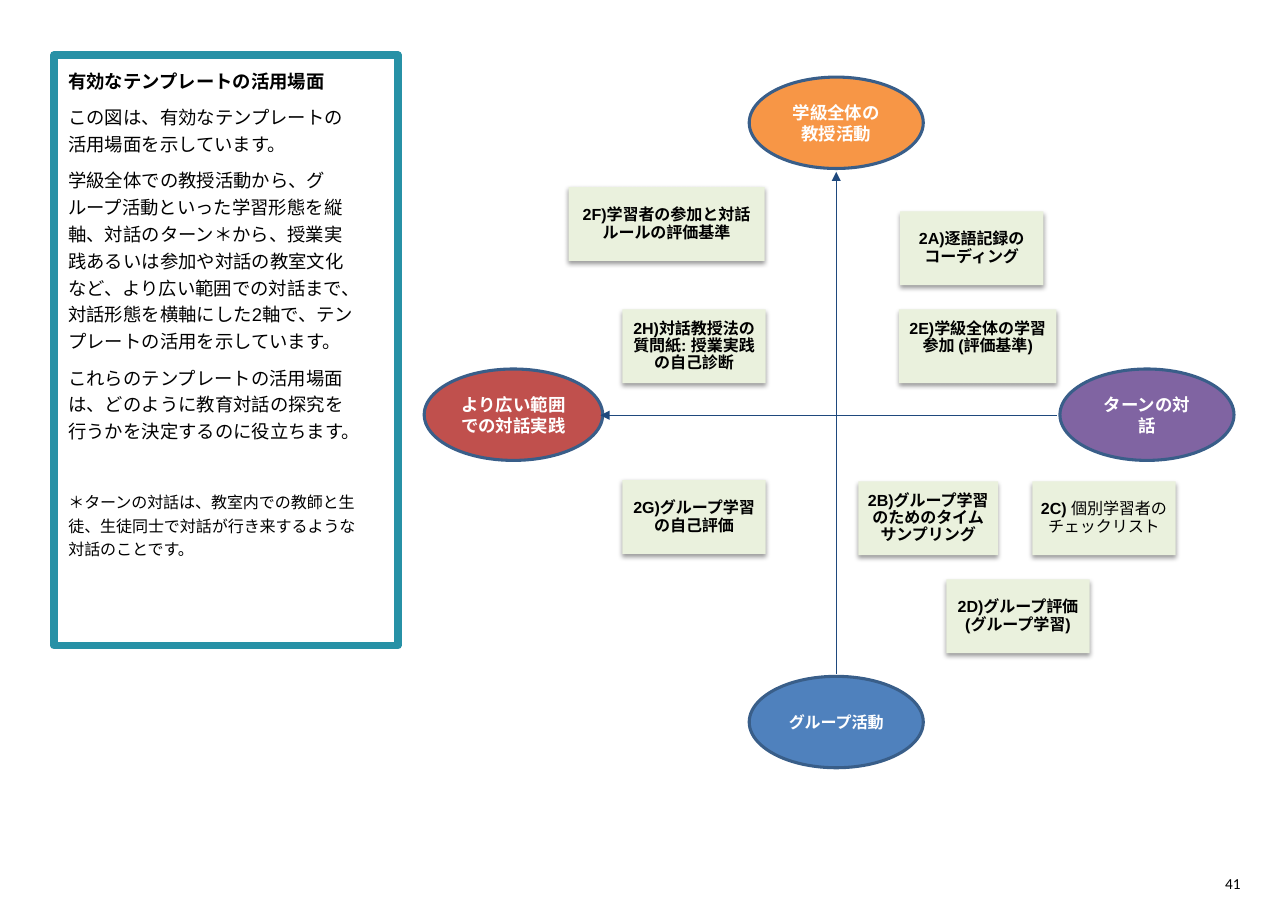
from lxml.etree import SubElement
from pptx import Presentation
from pptx.dml.color import RGBColor
from pptx.enum.shapes import MSO_CONNECTOR, MSO_SHAPE
from pptx.enum.text import MSO_ANCHOR, PP_ALIGN
from pptx.oxml.ns import qn
from pptx.util import Inches, Pt

BLACK = RGBColor(0x00, 0x00, 0x00)
WHITE = RGBColor(0xFF, 0xFF, 0xFF)
TEAL = RGBColor(0x27, 0x91, 0xA6)
NAVY = RGBColor(0x1F, 0x49, 0x7D)
OUTLINE = RGBColor(0x39, 0x5E, 0x89)
PALE_GREEN = RGBColor(0xEA, 0xF1, 0xDD)
RED = RGBColor(0xC0, 0x50, 0x4D)
PURPLE = RGBColor(0x80, 0x64, 0xA2)
ORANGE = RGBColor(0xF7, 0x96, 0x46)
BLUE = RGBColor(0x4F, 0x81, 0xBD)

# text, size, bold, space before
PANEL_TEXT = [
    ("有効なテンプレートの活用場面", 12, True, 0),
    ("この図は、有効なテンプレートの活用場面を示しています。", 12, False, 6.2),
    ("学級全体での教授活動から、グループ活動といった学習形態を縦軸、対話のターン＊から、"
     "授業実践あるいは参加や対話の教室文化など、より広い範囲での対話まで、"
     "対話形態を横軸にした2軸で、テンプレートの活用を示しています。", 12, False, 6.2),
    ("これらのテンプレートの活用場面は、どのように教育対話の探究を行うかを決定するのに役立ちます。",
     12, False, 6.2),
    ("＊ターンの対話は、教室内での教師と生徒、生徒同士で対話が行き来するような対話のことです。",
     10.5, False, 30),
]
# text, left, top, width, colour, size
AXIS_ENDS = [
    ("より広い範囲での対話実践", 3.85, 3.35, 1.62, RED, 11.4),
    ("ターンの対話", 9.62, 3.35, 1.58, PURPLE, 11.4),
    ("学級全体の教授活動", 6.8, 0.7, 1.58, ORANGE, 11.4),
    ("グループ活動", 6.8, 6.14, 1.58, BLUE, 10.5),
]
AXES = [(7.59, 6.12, 7.59, 1.56), (9.59, 3.77, 5.45, 3.77)]
# bold text, regular text, left, top, width, bottom inset
TEMPLATES = [
    ("2F)学習者の参加と対話ルールの評価基準", "", 5.16, 1.7, 1.78, 0.06),
    ("2H)対話教授法の質問紙: 授業実践の自己診断", "", 5.65, 2.81, 1.3, 0.06),
    ("2G)グループ学習の自己評価", "", 5.65, 4.36, 1.3, 0.06),
    ("2B)グループ学習のためのタイムサンプリング", "", 7.79, 4.37, 1.27, 0.06),
    ("2C) ", "個別学習者のチェックリスト", 9.37, 4.37, 1.3, 0.06),
    ("2D)グループ評価(グループ学習)", "", 8.59, 5.26, 1.3, 0.06),
    ("2A)逐語記録のコーディング", "", 8.17, 1.92, 1.3, 0.06),
    ("2E)学級全体の学習参加 (評価基準)", "", 8.16, 2.81, 1.43, 0.22),
]
AXIS_END_HEIGHT = 0.83
TEMPLATE_HEIGHT = 0.67


def write(paragraph, text, size=10.5, bold=True, color=BLACK, font="Arial",
          align=PP_ALIGN.CENTER, line_spacing=1.0, space_before=0):
    """Append a formatted run to the paragraph."""
    paragraph.alignment = align
    paragraph.line_spacing = line_spacing
    paragraph.space_before = Pt(space_before)
    run = paragraph.add_run()
    run.text = text
    run.font.size = Pt(size)
    run.font.bold = bold
    run.font.name = font
    run.font.color.rgb = color


def prepare_frame(shape, insets, anchor=MSO_ANCHOR.MIDDLE):
    """Set wrapping, anchor and insets (left, top, right, bottom)."""
    frame = shape.text_frame
    frame.word_wrap = True
    frame.vertical_anchor = anchor
    (frame.margin_left, frame.margin_top,
     frame.margin_right, frame.margin_bottom) = map(Inches, insets)
    return frame


def add_box(slide, kind, bounds, fill=None, line=None, line_width=2):
    shape = slide.shapes.add_shape(kind, *map(Inches, bounds))
    shape.shadow.inherit = False
    if fill is None:
        shape.fill.background()
    else:
        shape.fill.solid()
        shape.fill.fore_color.rgb = fill
    if line is None:
        shape.line.fill.background()
    else:
        shape.line.color.rgb = line
        shape.line.width = Pt(line_width)
    return shape


def add_soft_shadow(shape):
    effects = shape.element.spPr.find(qn("a:effectLst"))
    shadow = SubElement(effects, qn("a:outerShdw"), blurRad=str(Pt(3.1)),
                        dist=str(Pt(1.6)), dir="5400000", rotWithShape="0")
    color = SubElement(shadow, qn("a:srgbClr"), val=str(BLACK))
    SubElement(color, qn("a:alpha"), val="38000")


def add_panel(slide):
    panel = add_box(slide, MSO_SHAPE.RECTANGLE, (0.49, 0.5, 3.12, 5.36),
                    line=TEAL, line_width=5)
    frame = prepare_frame(panel, (0.13, 0.09, 0.35, 0), MSO_ANCHOR.TOP)
    for index, (text, size, bold, space_before) in enumerate(PANEL_TEXT):
        paragraph = frame.add_paragraph() if index else frame.paragraphs[0]
        write(paragraph, text, size=size, bold=bold, align=PP_ALIGN.LEFT,
              line_spacing=1.22, space_before=space_before)


def add_page_number(slide):
    box = slide.shapes.add_textbox(*map(Inches, (11.08, 7.93, 0.24, 0.18)))
    frame = prepare_frame(box, (0.04, 0, 0, 0), MSO_ANCHOR.TOP)
    write(frame.paragraphs[0], "41", size=10, bold=False, font="Calibri",
          align=PP_ALIGN.LEFT, line_spacing=1.05)


def add_axis(slide, ends):
    axis = slide.shapes.add_connector(MSO_CONNECTOR.STRAIGHT, *map(Inches, ends))
    axis.line.color.rgb = NAVY
    axis.line.width = Pt(0.75)
    SubElement(axis.line._get_or_add_ln(), qn("a:tailEnd"), type="triangle")
    SubElement(axis.element.spPr, qn("a:effectLst"))


def main():
    presentation = Presentation()
    presentation.slide_width = Inches(11.69)
    presentation.slide_height = Inches(8.27)
    slide = presentation.slides.add_slide(presentation.slide_layouts[6])

    add_panel(slide)
    add_page_number(slide)
    for text, left, top, width, color, size in AXIS_ENDS:
        ellipse = add_box(slide, MSO_SHAPE.OVAL, (left, top, width, AXIS_END_HEIGHT),
                          fill=color, line=OUTLINE)
        frame = prepare_frame(ellipse, (0.09, 0.04, 0.09, 0.04))
        write(frame.paragraphs[0], text, size=size, color=WHITE)
    for ends in AXES:
        add_axis(slide, ends)
    for bold_text, regular_text, left, top, width, bottom in TEMPLATES:
        card = add_box(slide, MSO_SHAPE.RECTANGLE, (left, top, width, TEMPLATE_HEIGHT),
                       fill=PALE_GREEN)
        add_soft_shadow(card)
        paragraph = prepare_frame(card, (0.06, 0.06, 0.06, bottom)).paragraphs[0]
        write(paragraph, bold_text, line_spacing=0.9)
        if regular_text:
            write(paragraph, regular_text, bold=False, line_spacing=0.9)

    presentation.save("out.pptx")


if __name__ == "__main__":
    main()
